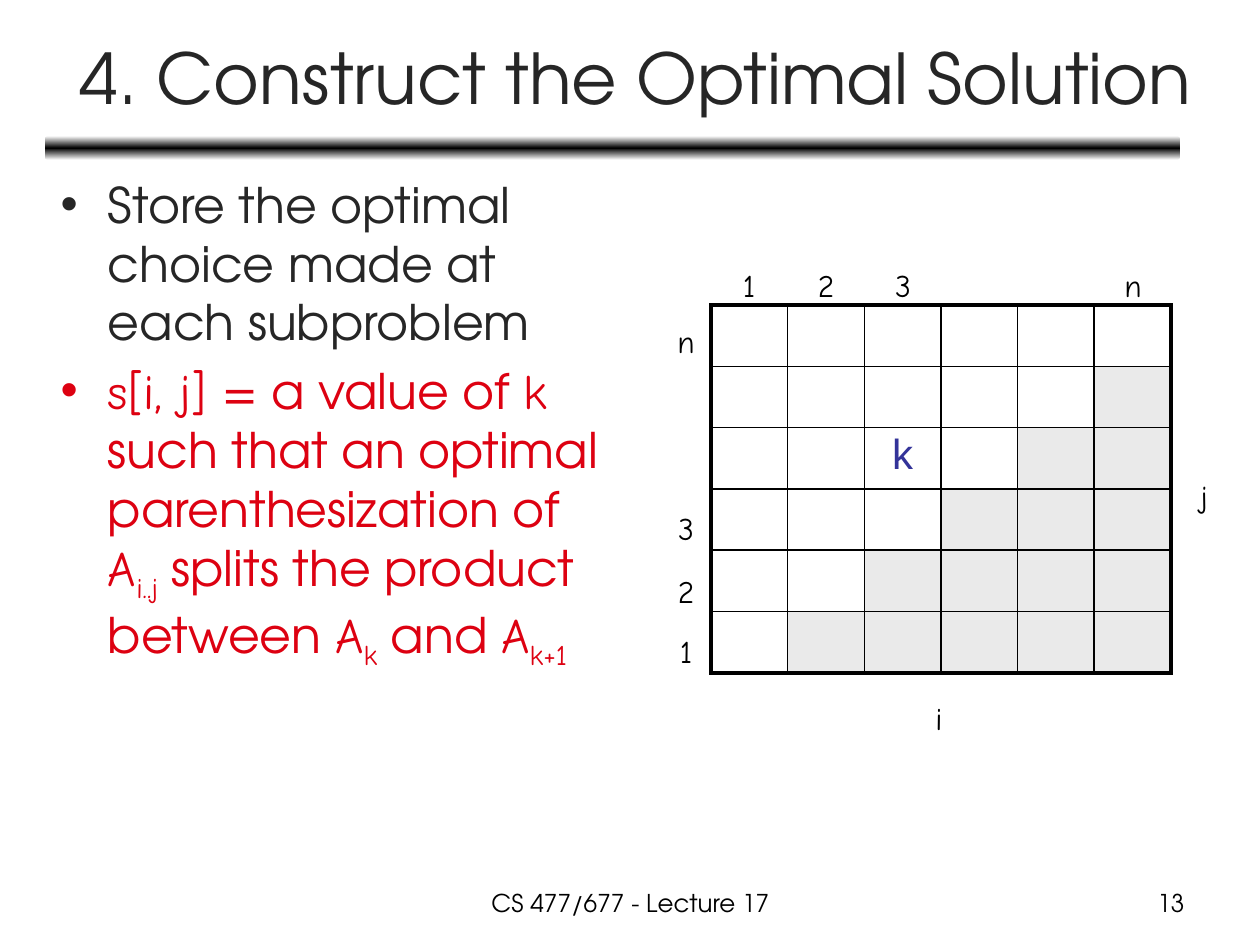
from dataclasses import dataclass

import lxml.etree
import pptx
import pptx.dml.color
import pptx.enum.shapes
import pptx.enum.text
import pptx.oxml.ns
import pptx.util

RGBColor = pptx.dml.color.RGBColor
PP_ALIGN = pptx.enum.text.PP_ALIGN
qn = pptx.oxml.ns.qn

BLACK = RGBColor(0x00, 0x00, 0x00)
WHITE = RGBColor(0xFF, 0xFF, 0xFF)
CHARCOAL = RGBColor(0x26, 0x26, 0x26)
RED = RGBColor(0xDD, 0x01, 0x11)
INDIGO = RGBColor(0x33, 0x33, 0x99)
SHADE = RGBColor(0xEA, 0xEA, 0xEA)

SANS = "TeX Gyre Adventor"
HAND = "Comic Neue"
EMU_PER_PX = 914400 / 126
N = 6  # rows and columns of the matrix
THIN, THICK = 1, 2.25


@dataclass(frozen=True)
class Box:
    left: int
    top: int
    width: int
    height: int

    def emu(self) -> list[pptx.util.Emu]:
        return [px(v) for v in (self.left, self.top, self.width, self.height)]


@dataclass(frozen=True)
class IndexLabel:
    text: str
    center: int
    top: int


@dataclass(frozen=True)
class Piece:
    text: str
    font: str = SANS
    subscript: bool = False


MATRIX = Box(711, 305, 460, 368)
COLUMN_LABELS = [
    IndexLabel(text, MATRIX.left + round((col + 0.5) * MATRIX.width / N), 260)
    for text, col in (("1", 0), ("2", 1), ("3", 2), ("n", 5))
]
ROW_LABELS = [
    IndexLabel(text, 686, top)
    for text, top in (("n", 316), ("3", 503), ("2", 566), ("1", 626))
]
AXIS_LABELS = [IndexLabel("j", 1204, 471), IndexLabel("i", 939, 693)]

CHOICE = [Piece("Store the optimal choice made at each subproblem")]
DEFINITION = [
    Piece("s[i, j] ", HAND),
    Piece("= a value of "),
    Piece("k", HAND),
    Piece(" such that an optimal parenthesization of "),
    Piece("A", HAND),
    Piece("i..j", HAND, True),
    Piece(" splits the product between "),
    Piece("A", HAND),
    Piece("k", HAND, True),
    Piece(" and "),
    Piece("A", HAND),
    Piece("k+1", HAND, True),
]


def px(n: float) -> pptx.util.Emu:
    return pptx.util.Emu(round(n * EMU_PER_PX))


def style(p, size: int, name: str, color: RGBColor, align=None) -> None:
    p.font.size = pptx.util.Pt(size)
    p.font.name = name
    p.font.color.rgb = color
    p.alignment = align


def place(sp, box: Box) -> None:
    sp.left, sp.top, sp.width, sp.height = box.emu()
    sp.text_frame.auto_size = pptx.enum.text.MSO_AUTO_SIZE.NONE


def add_text(s, box: Box, text: str, size: int, name: str, align, wrap: bool = True) -> None:
    tf = s.shapes.add_textbox(*box.emu()).text_frame
    tf.word_wrap = wrap
    tf.text = text
    style(tf.paragraphs[0], size, name, BLACK, align)


def add_index_label(s, label: IndexLabel) -> None:
    box = Box(label.center - 22, label.top, 44, 50)
    add_text(s, box, label.text, 18, HAND, PP_ALIGN.CENTER, wrap=False)


def add_rule(s, box: Box) -> None:
    """Draw the bar under the title, fading from black to white above and below."""
    sp = s.shapes.add_shape(pptx.enum.shapes.MSO_SHAPE.ROUNDED_RECTANGLE, *box.emu())
    sp.shadow.inherit = False
    sp.line.fill.background()
    sp.fill.gradient()
    sp.fill.gradient_angle = 90
    stops = sp._element.spPr.find(".//" + qn("a:gsLst"))
    stops.clear()
    for pos, color in ((0, WHITE), (50000, BLACK), (100000, WHITE)):
        stop = lxml.etree.SubElement(stops, qn("a:gs"), pos=str(pos))
        lxml.etree.SubElement(stop, qn("a:srgbClr"), val=str(color))


def fill_paragraph(p, pieces: list[Piece], color: RGBColor) -> None:
    style(p, 28, SANS, color)
    for piece in pieces:
        r = p.add_run()
        r.text = piece.text
        r.font.size = pptx.util.Pt(28)
        r.font.name = piece.font
        r.font.color.rgb = color
        if piece.subscript:
            r.font._element.set("baseline", "-25000")


def set_borders(cell, widths: dict[str, float]) -> None:
    tc_pr = cell._tc.get_or_add_tcPr()
    for i, (side, width) in enumerate(widths.items()):
        ln = lxml.etree.Element(qn("a:ln" + side), w=str(pptx.util.Pt(width)))
        fill = lxml.etree.SubElement(ln, qn("a:solidFill"))
        lxml.etree.SubElement(fill, qn("a:srgbClr"), val=str(BLACK))
        tc_pr.insert(i, ln)


def add_matrix(s) -> None:
    """Draw the table of choices; the cells below its diagonal are unused."""
    table = s.shapes.add_table(N, N, *MATRIX.emu()).table
    table.first_row = table.horz_banding = False
    for row in range(N):
        for col in range(N):
            cell = table.cell(row, col)
            if row + col >= N:
                cell.fill.solid()
                cell.fill.fore_color.rgb = SHADE
            else:
                cell.fill.background()
            edges = {"L": col == 0, "R": col == N - 1, "T": row == 0, "B": row == N - 1}
            set_borders(cell, {side: THICK if outer else THIN for side, outer in edges.items()})
    cell = table.cell(2, 2)
    cell.margin_top, cell.margin_bottom = px(4), 0
    cell.text = "k"
    style(cell.text_frame.paragraphs[0], 24, "Arial", INDIGO, PP_ALIGN.CENTER)


def main() -> None:
    prs = pptx.Presentation()
    prs.slide_width, prs.slide_height = px(1260), px(945)
    s = prs.slides.add_slide(prs.slide_layouts[1])
    title, body = s.placeholders

    add_rule(s, Box(45, 136, 1135, 24))
    place(title, Box(47, 14, 1177, 125))
    title.text_frame.text = "4. Construct the Optimal Solution"
    style(title.text_frame.paragraphs[0], 40, SANS, CHARCOAL, PP_ALIGN.CENTER)

    place(body, Box(48, 168, 573, 699))
    tf = body.text_frame
    fill_paragraph(tf.paragraphs[0], CHOICE, CHARCOAL)
    fill_paragraph(tf.add_paragraph(), DEFINITION, RED)

    add_matrix(s)
    for label in COLUMN_LABELS + ROW_LABELS + AXIS_LABELS:
        add_index_label(s, label)

    add_text(s, Box(431, 882, 399, 44), "CS 477/677 - Lecture 17", 14, SANS, PP_ALIGN.CENTER)
    add_text(s, Box(903, 882, 294, 44), "13", 14, SANS, PP_ALIGN.RIGHT)
    prs.save("out.pptx")


if __name__ == "__main__":
    main()
